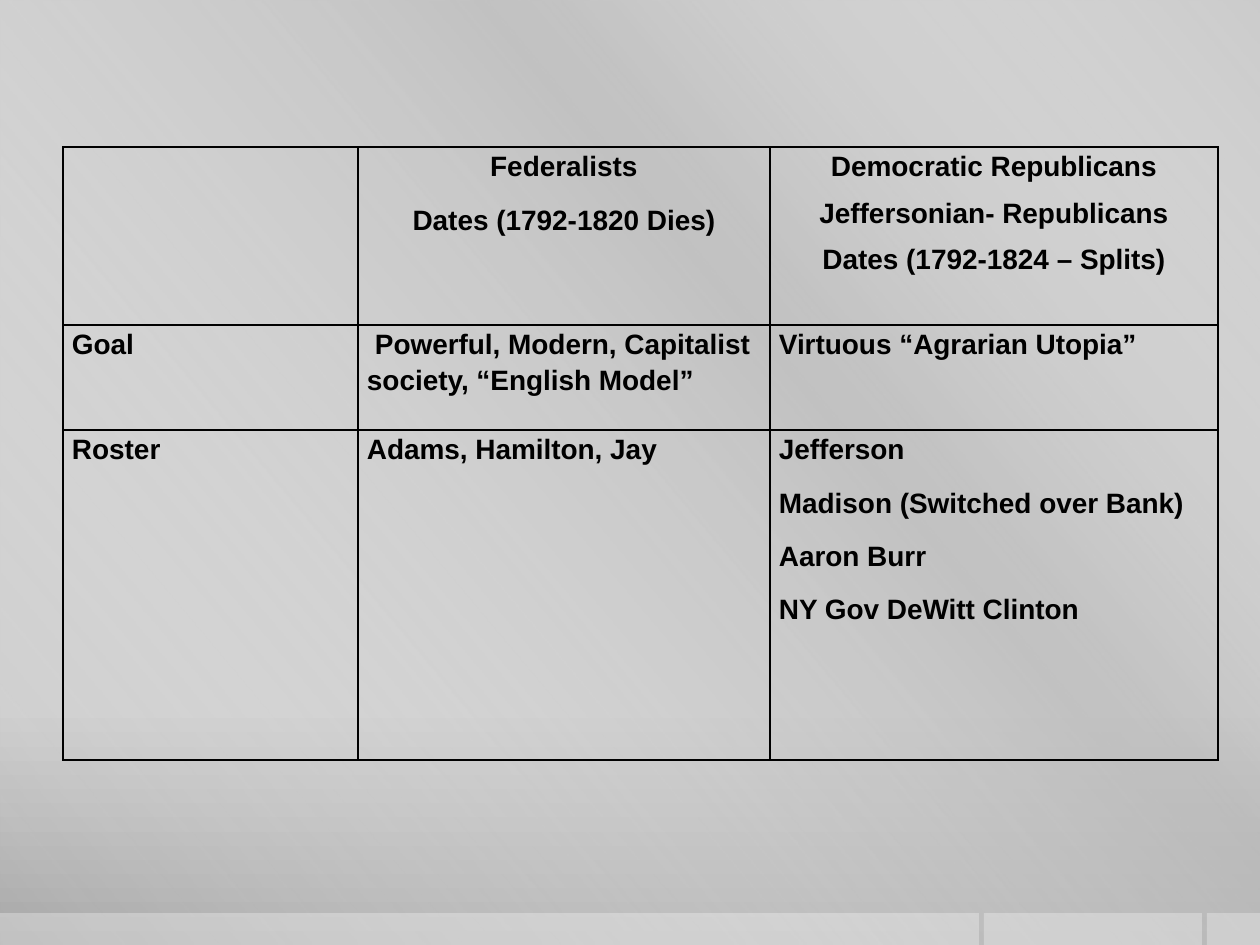
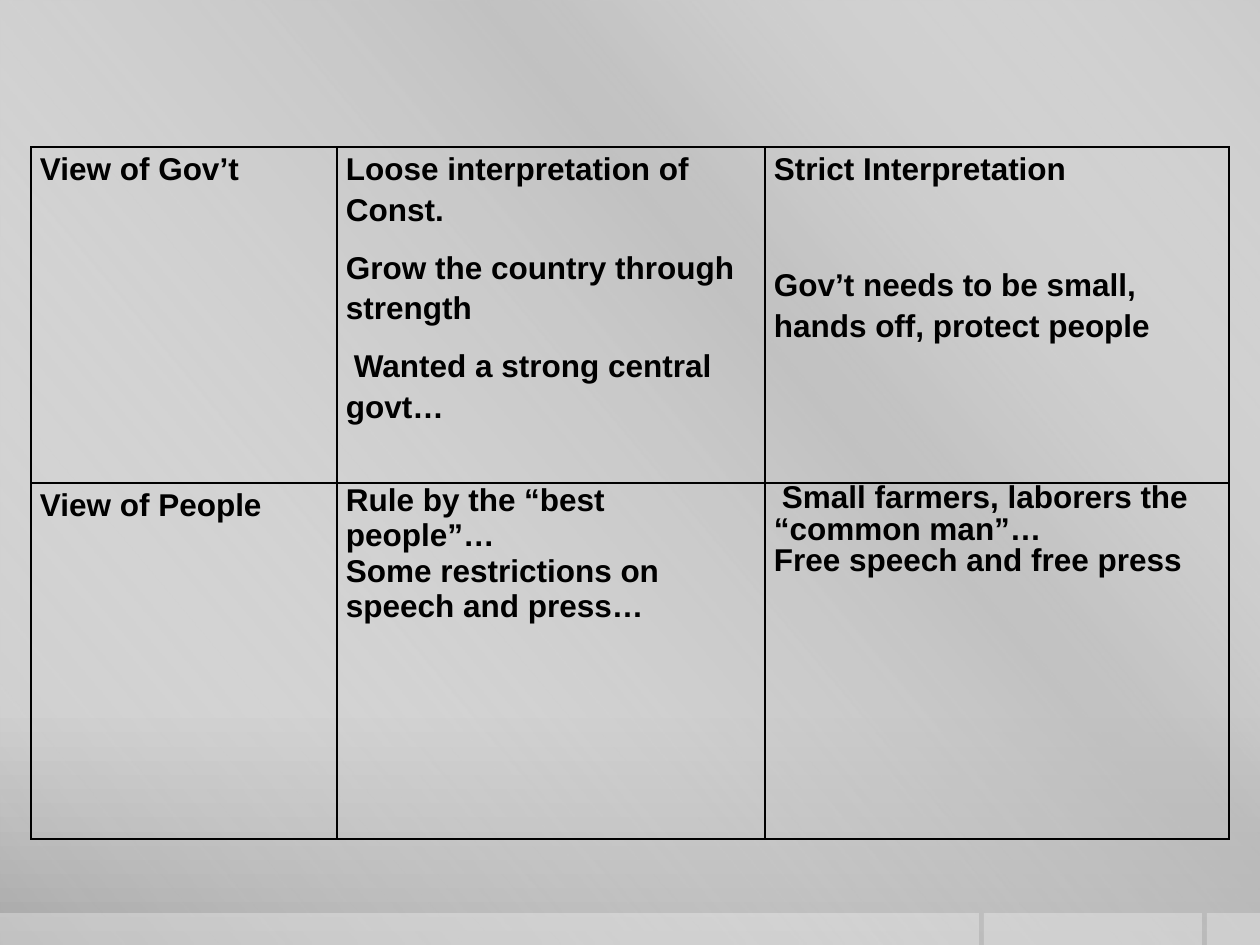
"""Build two slides comparing the Federalists and the Democratic Republicans."""
from lxml import etree
from pptx import Presentation
from pptx.dml.color import RGBColor
from pptx.enum.shapes import MSO_SHAPE
from pptx.enum.text import PP_ALIGN
from pptx.oxml.ns import qn
from pptx.util import Pt

PX = 914400 / 126
RECT = MSO_SHAPE.RECTANGLE
LEFT, CENTER = PP_ALIGN.LEFT, PP_ALIGN.CENTER
FONT = "Arial"
BLACK = RGBColor(0x00, 0x00, 0x00)
WHITE = RGBColor(0xFF, 0xFF, 0xFF)
SILVER = RGBColor(0xBF, 0xBF, 0xBF)
GRAY_TOP = RGBColor(0xCB, 0xCB, 0xCB)
GRAY_MID = RGBColor(0xC8, 0xC8, 0xC8)
GRAY_LOW = RGBColor(0xA7, 0xA7, 0xA7)
TABLE_TOP = 147
INDENT = 8

BODY = (LEFT, 1.15, 10, 0)
BODY_INDENTED = (LEFT, 1.15, 10, INDENT)
HEAD = (CENTER, 1.15, 10, 0)
HEAD_TIGHT = (CENTER, 1.15, 6, 0)
SPREAD = (LEFT, 1.15, 43, 0)
SINGLE = (LEFT, 1.0, 0, 0)
DENSE = (LEFT, 0.9, 0, 0)

TABLES = [
    {"left": 63, "cols": [295, 412, 448], "rows": [178, 105, 330], "size": 16, "cells": [
        [(BODY, []),
         (HEAD, ["Federalists", "Dates (1792-1820 Dies)"]),
         (HEAD_TIGHT, ["Democratic Republicans", "Jeffersonian- Republicans",
                       "Dates (1792-1824 – Splits)"])],
        [(BODY, ["Goal"]),
         (BODY_INDENTED, ["Powerful, Modern, Capitalist society, “English Model”"]),
         (BODY, ["Virtuous “Agrarian Utopia”"])],
        [(BODY, ["Roster"]),
         (BODY, ["Adams, Hamilton, Jay"]),
         (BODY, ["Jefferson", "Madison (Switched over Bank)", "Aaron Burr",
                 "NY Gov DeWitt Clinton"])],
    ]},
    {"left": 31, "cols": [306, 428, 464], "rows": [336, 356], "size": 18, "cells": [
        [(BODY, ["View of Gov’t"]),
         (BODY, ["Loose interpretation of Const.", "Grow the country through strength",
                 "Wanted a strong central govt…"]),
         (SPREAD, ["Strict Interpretation",
                   "Gov’t needs to be small, hands off, protect people"])],
        [(BODY, ["View of People"]),
         (SINGLE, ["Rule by the “best people”…", "Some restrictions on speech and press…"]),
         (DENSE, ["Small farmers, laborers the “common man”…",
                  "Free speech and free press"])],
    ]},
]
INDENTED = ("Wanted", "Small farmers")


def px(n):
    return int(n * PX)


def blend(parent, stops, angle):
    """Replace the solid fill of parent with a linear gradient."""
    grad = etree.Element(qn("a:gradFill"), rotWithShape="1")
    gs_lst = etree.SubElement(grad, qn("a:gsLst"))
    for pos, color, alpha in stops:
        gs = etree.SubElement(gs_lst, qn("a:gs"), pos=str(pos * 1000))
        clr = etree.SubElement(gs, qn("a:srgbClr"), val=str(color))
        etree.SubElement(clr, qn("a:alpha"), val=str(alpha * 1000))
    etree.SubElement(grad, qn("a:lin"), ang=str(angle * 60000), scaled="0")
    parent.replace(parent.find(qn("a:solidFill")), grad)


prs = Presentation()
prs.slide_width, prs.slide_height = px(1260), px(945)
master = prs.slide_master
slides = [prs.slides.add_slide(prs.slide_layouts[6]) for _ in TABLES]

master.background.fill.solid()
master.background.fill.fore_color.rgb = GRAY_MID
blend(master.element.xpath("p:cSld/p:bg/p:bgPr")[0],
      [(0, GRAY_TOP, 100), (76, GRAY_MID, 100), (100, GRAY_LOW, 100)], 90)

backdrop = [(0, 0, 1260, 945), (1207, 913, 53, 32), (984, 913, 218, 32), (0, 913, 979, 32)]
for i, box in enumerate(backdrop):
    sp = slides[0].shapes.add_shape(RECT, *map(px, box))
    sp.shadow.inherit = False
    sp.line.fill.background()
    sp.fill.solid()
    sp.fill.fore_color.rgb = WHITE
    if i == 0:
        blend(sp.element.spPr, [(0, WHITE, 0), (34, SILVER, 61), (38, SILVER, 76),
                                (100, WHITE, 0)], 140)
    else:
        clr = sp.element.spPr.find(qn("a:solidFill"))[0]
        etree.SubElement(clr, qn("a:alpha"), val="30000")
    sp.element.xpath(".//p:cNvPr")[0].set("id", str(100 + i))
    master.shapes.element.insert(2 + i, sp.element)

for s, data in zip(slides, TABLES):
    cols, rows = data["cols"], data["rows"]
    table = s.shapes.add_table(len(rows), len(cols), px(data["left"]), px(TABLE_TOP),
                               px(sum(cols)), px(sum(rows))).table
    table.first_row = table.horz_banding = False
    for col, width in zip(table.columns, cols):
        col.width = px(width)
    for row, height, contents in zip(table.rows, rows, data["cells"]):
        row.height = px(height)
        for cell, (style, texts) in zip(row.cells, contents):
            align, spacing, after, indent = style
            cell.margin_left = cell.margin_right = px(9)
            cell.margin_top = cell.margin_bottom = 0
            cell.fill.background()
            tcPr = cell._tc.get_or_add_tcPr()
            for i, side in enumerate(("lnL", "lnR", "lnT", "lnB")):
                ln = etree.Element(qn("a:" + side), w=str(Pt(1)))
                fill = etree.SubElement(ln, qn("a:solidFill"))
                etree.SubElement(fill, qn("a:srgbClr"), val=str(BLACK))
                tcPr.insert(i, ln)
            tf = cell.text_frame
            for i, text in enumerate(texts):
                p = tf.add_paragraph() if i else tf.paragraphs[0]
                p.alignment = align
                p.line_spacing = spacing
                p.space_before, p.space_after = Pt(0), Pt(after)
                first = INDENT if text.startswith(INDENTED) else indent
                p._p.get_or_add_pPr().set("indent", str(px(first)))
                r = p.add_run()
                r.text = text
                r.font.name, r.font.size, r.font.bold = FONT, Pt(data["size"]), True
                r.font.color.rgb = BLACK

prs.save("out.pptx")
